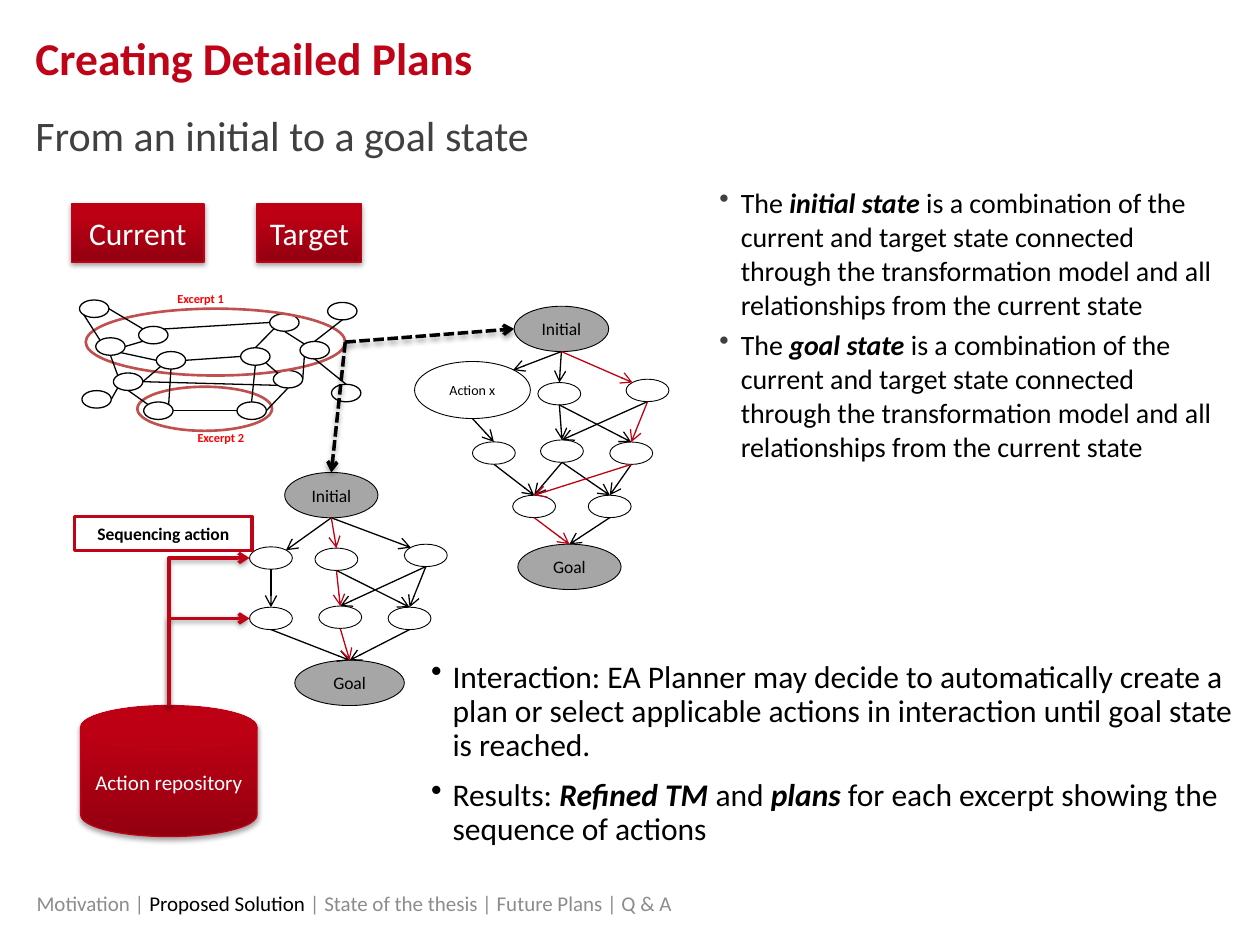
from lxml import etree
from pptx import Presentation
from pptx.dml.color import RGBColor
from pptx.enum.dml import MSO_LINE
from pptx.enum.shapes import MSO_CONNECTOR as LINK, MSO_SHAPE as SHAPE
from pptx.enum.text import MSO_ANCHOR as ANCHOR, PP_ALIGN as ALIGN
from pptx.oxml import parse_xml
from pptx.oxml.ns import nsdecls, qn
from pptx.util import Pt

BLACK = RGBColor(0x00, 0x00, 0x00)
WHITE = RGBColor(0xFF, 0xFF, 0xFF)
DARK = RGBColor(0x40, 0x40, 0x40)
MUTED = RGBColor(0x8C, 0x8C, 0x8C)
STATE = RGBColor(0xA6, 0xA6, 0xA6)
CRIMSON = RGBColor(0xC0, 0x04, 0x18)
PATH_RED = RGBColor(0xC0, 0x00, 0x14)
DEEP_RED = RGBColor(0x92, 0x00, 0x10)
BRIGHT_RED = RGBColor(0xBE, 0x00, 0x14)
EXCERPT_RED = RGBColor(0xC0, 0x50, 0x4D)
LABEL_RED = RGBColor(0xFF, 0x00, 0x00)
SHADOW = (f'<a:effectLst {nsdecls("a")}><a:outerShdw blurRad="39400" dist="21600" dir="5400000" '
          'rotWithShape="0"><a:srgbClr val="000000"><a:alpha val="36000"/></a:srgbClr>'
          '</a:outerShdw></a:effectLst>')
NO_SHADOW = f'<a:effectLst {nsdecls("a")}/>'
STRONG = {"bold": True, "italic": True}
SITES = {"t": (0.5, 0), "tl": (0.15, 0.15), "l": (0, 0.5), "bl": (0.15, 0.85),
         "b": (0.5, 1), "br": (0.85, 0.85), "r": (1, 0.5), "tr": (0.85, 0.15)}


def write(box, paragraphs, size, color, align=ALIGN.LEFT, anchor=ANCHOR.TOP,
          margins=(7.2, 3.6), wrap=True, bold=False, indent=None, bullet=None, spacing=None, before=0):
    frame = box.text_frame
    side, edge = map(Pt, margins)
    layout = {"word_wrap": wrap, "vertical_anchor": anchor, "margin_left": side,
              "margin_right": side, "margin_top": edge, "margin_bottom": edge}
    for name, value in layout.items():
        setattr(frame, name, value)
    for index, runs in enumerate(paragraphs):
        para = frame.add_paragraph() if index else frame.paragraphs[0]
        para.alignment = align
        if bullet is not None:
            props = para._p.get_or_add_pPr()
            props.set("marL", str(Pt(indent)))
            props.set("indent", str(Pt(-12.24)))
            tint = etree.SubElement(props, qn("a:buClr"))
            etree.SubElement(tint, qn("a:srgbClr"), val=str(bullet))
            etree.SubElement(props, qn("a:buChar"), char="•")
        if spacing:
            para.line_spacing = Pt(spacing)
            para.space_before = Pt(before if index else 0)
            para.space_after = Pt(3)
        for text, changes in runs:
            span = para.add_run()
            span.text = text
            look = {"name": "Calibri", "size": Pt(size), "bold": bold, "italic": False} | changes
            span.font.color.rgb = look.pop("color", color)
            for name, value in look.items():
                setattr(span.font, name, value)


def draw_link(start, end, color=BLACK, weight=0.75, kind=LINK.STRAIGHT, dash=None,
              arrow=True, effect=NO_SHADOW):
    link = slide.shapes.add_connector(kind, *map(Pt, start + end))
    link.line.color.rgb = color
    link.line.width = Pt(weight)
    if dash:
        link.line.dash_style = dash
    props = link.element.spPr
    if arrow:
        etree.SubElement(props.find(qn("a:ln")), qn("a:tailEnd"), type="arrow")
    props.append(parse_xml(effect))
    return link


deck = Presentation()
deck.slide_width, deck.slide_height = Pt(720), Pt(540)
slide = deck.slides.add_slide(deck.slide_layouts[5])
shapes = slide.shapes

title = shapes.title
title.left, title.top, title.width, title.height = map(Pt, (20.2, 17.3, 676, 42.5))
write(title, [[("Creating Detailed Plans", {})]], 26, CRIMSON, margins=(0, 0), bold=True)

state_tail = (" is a combination of the current and target state connected through "
              "the transformation model and all relationships from the current state")
text_boxes = [
    ((20.2, 72, 676, 36), [[("From an initial to a goal state", {})]], 24, DARK,
     {"wrap": False, "spacing": 19.5}),
    ((393.8, 105.8, 303.1, 189.4),
     [[("The ", {}), (state, STRONG), (state_tail, {})] for state in ("initial state", "goal state")],
     16, BLACK, {"indent": 29.5, "bullet": DARK, "spacing": 19.5}),
    ((246.4, 377.3, 465.1, 97.2),
     [[("Interaction: EA Planner may decide to automatically create a plan or select applicable "
        "actions in interaction until goal state is reached.", {})],
      [("Results: ", {}), ("Refined TM ", STRONG), ("and ", {}), ("plans", STRONG),
       (" for each excerpt showing the sequence of actions", {})]],
     18, BLACK, {"indent": 12.24, "bullet": BLACK, "spacing": 19.5, "before": 6}),
    ((20.9, 507.6, 541.4, 16.6),
     [[("Motivation | ", {}), ("Proposed Solution", {"color": BLACK}),
       (" | State of the thesis | Future Plans | Q & A", {})]],
     12, MUTED, {"anchor": ANCHOR.MIDDLE, "margins": (0, 5.76), "wrap": False}),
]
for place, paragraphs, size, color, options in text_boxes:
    write(shapes.add_textbox(*map(Pt, place)), paragraphs, size, color,
          **{"margins": (0, 0)} | options)

state_nodes = {
    "upper_initial": (293.8, 175, 54, 25.9, "Initial", 10, STATE),
    "upper_goal": (295.9, 311, 59, 25.9, "Goal", 10, STATE),
    "action_x": (236.9, 206.6, 66.2, 32.6, "Action x", 8, WHITE),
    "lower_initial": (162.7, 270, 53.3, 25.9, "Initial", 10, STATE),
    "lower_goal": (168.5, 377.3, 62.6, 25.9, "Goal", 10, STATE),
}
action_nodes = {
    "u1": (307.4, 218.6), "u2": (357.8, 216.7), "u3": (270, 252.5), "u4": (308.9, 251.4),
    "u5": (348.5, 252.6), "u6": (293, 283), "u7": (336.2, 283),
    "w1": (142.6, 312.5), "w2": (180, 313.2), "w3": (231.1, 311),
    "w4": (142.6, 347), "w5": (182.2, 346.3), "w6": (221.8, 347),
}
model_nodes = {
    "a": (54.7, 193), "b": (45.4, 171.4), "c": (64.8, 213.1), "d": (46.8, 223.2),
    "e": (82.1, 229.7), "f": (89.3, 200.9), "g": (79.2, 186.5),
    "h": (137.5, 198.7), "i": (154.1, 179.3), "j": (156.2, 211.7), "k": (135.4, 229.7),
    "l": (189.4, 219.6), "m": (171.4, 195.1), "n": (187.2, 172.8),
}
excerpts = {"excerpt_1": (49, 176.4, 148.3, 38.2), "excerpt_2": (78.5, 221, 77, 25.2)}

ovals = [(name, spot[:4], spot[6], BLACK, 0.5) for name, spot in state_nodes.items()]
ovals += [(name, (*spot, 24.5, 12.8), WHITE, BLACK, 0.5) for name, spot in action_nodes.items()]
ovals += [(name, (*spot, 16.8, 10), None, BLACK, 0.75) for name, spot in model_nodes.items()]
ovals += [(name, spot, None, EXCERPT_RED, 1.5) for name, spot in excerpts.items()]
anchors = {}
for name, (left, top, width, height), fill, line, weight in ovals:
    oval = shapes.add_shape(SHAPE.OVAL, *map(Pt, (left, top, width, height)))
    oval.shadow.inherit = False
    oval.line.color.rgb = line
    oval.line.width = Pt(weight)
    if fill is None:
        oval.fill.background()
    else:
        oval.fill.solid()
        oval.fill.fore_color.rgb = fill
    if name in state_nodes:
        text, size = state_nodes[name][4:6]
        write(oval, [[(text, {})]], size, BLACK, ALIGN.CENTER, ANCHOR.MIDDLE)
    for site, (across, down) in SITES.items():
        anchors[f"{name}.{site}"] = (left + across * width, top + down * height)

model_links = ("b.r g.tl, b.bl a.tl, f.l a.br, c.r f.bl, e.tr f.b, g.bl a.r, d.r c.bl, c.tl a.b, "
               "e.tl c.b, i.bl h.t, m.tl i.b, j.r m.bl, l.t m.b, n.b m.t, k.t h.b, j.tl h.br, "
               "k.r j.b, i.l g.tr, h.l f.r, j.bl c.r, k.l e.r")
plan_links = ("upper_initial.b u1.t, upper_initial.b action_x.tr, action_x.b u3.t, u1.b u4.t, "
              "u2.b u4.t, u1.b u5.t, u3.b u6.t, u4.b u6.t, u4.b u7.t, u5.b u7.t, u7.b upper_goal.t, "
              "lower_initial.b w3.tl, lower_initial.b w1.tr, w1.b w4.t, w3.b w5.t, w3.b w6.t, "
              "w2.b w6.t, w4.b lower_goal.t, w6.b lower_goal.t")
chosen_links = ("upper_initial.b u2.tl, u2.b u5.t, u5.b u6.t, u6.b upper_goal.t, "
                "lower_initial.b w2.t, w2.b w5.t, w5.b lower_goal.t")
excerpt_links = "excerpt_1.r upper_initial.l, excerpt_1.r lower_initial.t"
link_groups = [
    (model_links, {"arrow": False}),
    (plan_links, {}),
    (chosen_links, {"color": PATH_RED}),
    (excerpt_links, {"weight": 2, "dash": MSO_LINE.SQUARE_DOT, "effect": SHADOW}),
]
for links, options in link_groups:
    for pair in links.split(", "):
        start, end = pair.split()
        draw_link(anchors[start], anchors[end], **options)

for number, place in enumerate([(94.3, 162.7, 44.6, 15.8), (105.8, 242.6, 44.6, 15.8)], 1):
    write(shapes.add_textbox(*map(Pt, place)), [[(f"Excerpt {number}", {})]], 7, LABEL_RED, bold=True)

red_boxes = [
    (SHAPE.RECTANGLE, (41, 116.6, 75.6, 33.1), "Current", 18),
    (SHAPE.RECTANGLE, (146.9, 116.6, 59.8, 33.1), "Target", 18),
    (SHAPE.FLOWCHART_MAGNETIC_DISK, (46.1, 403.2, 100.8, 74.9), "Action repository", 12),
]
for kind, place, text, size in red_boxes:
    box = shapes.add_shape(kind, *map(Pt, place))
    box.fill.gradient()
    box.fill.gradient_angle = 90
    for stop, color, position in zip(box.fill.gradient_stops, (DEEP_RED, BRIGHT_RED), (0, 0.8)):
        stop.color.rgb = color
        stop.position = position
    box.line.color.rgb = PATH_RED
    box.line.width = Pt(0.75)
    box.element.spPr.append(parse_xml(SHADOW))
    write(box, [[(text, {})]], size, WHITE, ALIGN.CENTER, ANCHOR.MIDDLE)

source_x, source_y = 96.5, 403.2
for target in ("w1.l", "w4.l"):
    target_x, target_y = anchors[target]
    middle_x, middle_y = (source_x + target_x) / 2, (source_y + target_y) / 2
    half_rise, half_run = (source_y - target_y) / 2, (target_x - source_x) / 2
    bend = draw_link((middle_x + half_rise, middle_y + half_run),
                     (middle_x - half_rise, middle_y - half_run),
                     CRIMSON, 2, LINK.ELBOW, effect=SHADOW)
    bend.element.spPr.find(qn("a:xfrm")).set("rot", "5400000")
    bend.element.spPr.find(qn("a:prstGeom")).set("prst", "bentConnector2")

sequencing = shapes.add_shape(SHAPE.RECTANGLE, *map(Pt, (42.5, 295.2, 101.5, 19.4)))
sequencing.shadow.inherit = False
sequencing.fill.background()
sequencing.line.color.rgb = CRIMSON
sequencing.line.width = Pt(2)
write(sequencing, [[("Sequencing action", {})]], 10, BLACK, ALIGN.CENTER, bold=True)

deck.save("out.pptx")
